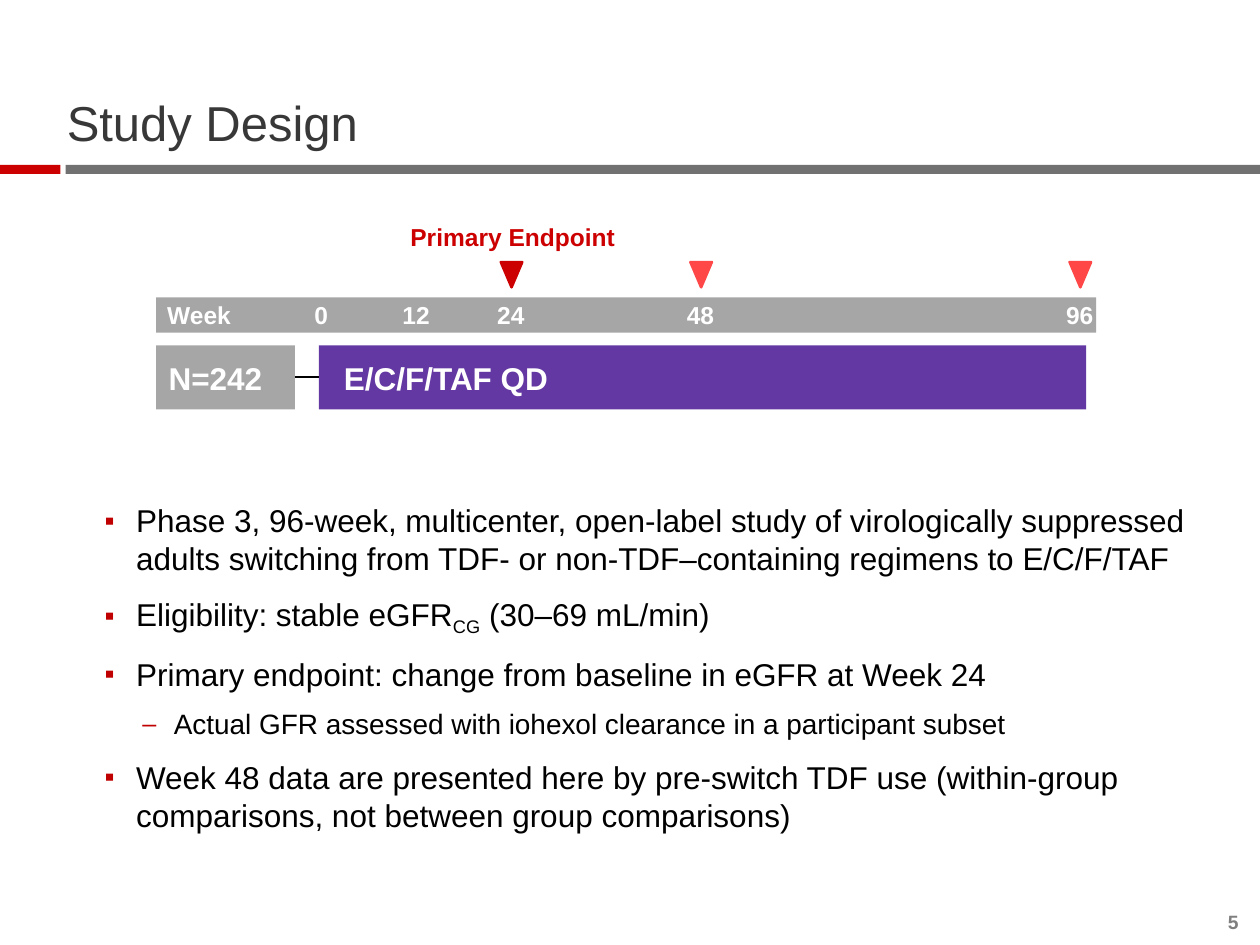
import pptx
import pptx.util
import pptx.dml.color
import pptx.enum.shapes
import pptx.enum.text
import pptx.oxml.ns
from lxml import etree

Inches = pptx.util.Inches
Pt = pptx.util.Pt
Kind = pptx.enum.shapes.MSO_SHAPE
Align = pptx.enum.text.PP_ALIGN
Anchor = pptx.enum.text.MSO_ANCHOR
qn = pptx.oxml.ns.qn
COLORS = {"red": "CC0000", "light": "FF4747", "dark": "717171", "gray": "A6A6A6",
          "violet": "6338A2", "title": "383838", "bullet": "C00000",
          "number": "7F7F7F", "black": "000000", "white": "FFFFFF"}


def color(name):
    return pptx.dml.color.RGBColor.from_string(COLORS[name])


def write(frame, text, size=14, ink="white", bold=True, align=Align.CENTER,
          anchor=Anchor.MIDDLE, pad=(0, 0, 0, 0)):
    """Put one formatted paragraph in a text frame."""
    frame.word_wrap = True
    frame.auto_size = pptx.enum.text.MSO_AUTO_SIZE.NONE
    frame.vertical_anchor = anchor
    (frame.margin_left, frame.margin_top,
     frame.margin_right, frame.margin_bottom) = [Inches(p) for p in pad]
    para = frame.paragraphs[0]
    para.alignment = align
    run = para.add_run()
    run.text = text
    font = run.font
    font.name, font.size, font.bold = "Arial", Pt(size), bold
    font.color.rgb = color(ink)


def block(kind, box, fill):
    """Add a filled shape without shadow or line."""
    shape = slide.shapes.add_shape(kind, *[Inches(v) for v in box])
    shape.shadow.inherit = False
    shape.fill.solid()
    shape.fill.fore_color.rgb = color(fill)
    shape.line.fill.background()
    return shape


deck = pptx.Presentation()
deck.slide_width, deck.slide_height = Inches(10), Inches(7.5)
slide = deck.slides.add_slide(deck.slide_layouts[1])
title, body = slide.placeholders

# Title and rule
title.left, title.top, title.width, title.height = [
    Inches(v) for v in (0.53, 0.47, 9, 0.74)]
write(title.text_frame, "Study Design", size=28, ink="title", bold=False,
      align=Align.LEFT, anchor=Anchor.BOTTOM)
title.text_frame.paragraphs[0].line_spacing = 0.9
block(Kind.RECTANGLE, (0.52, 1.31, 9.48, 0.07), "dark")
block(Kind.RECTANGLE, (0, 1.31, 0.48, 0.07), "red")

# Study arm
group = block(Kind.RECTANGLE, (1.24, 2.74, 1.1, 0.51), "gray")
write(group.text_frame, "N=242", size=18, align=Align.LEFT, pad=(0.1, 0.05, 0.1, 0.05))
arm = block(Kind.RECTANGLE, (2.53, 2.74, 6.09, 0.51), "violet")
write(arm.text_frame, "E/C/F/TAF QD", size=18, align=Align.LEFT, pad=(0.2, 0.05, 0.1, 0.05))
link = slide.shapes.add_connector(pptx.enum.shapes.MSO_CONNECTOR.STRAIGHT, 0, 0, 0, 0)
link.begin_connect(group, 3)
link.end_connect(arm, 1)
link.line.color.rgb = color("black")
link.line.width = Pt(1)
etree.SubElement(link.element.spPr, qn("a:effectLst"))

# Time line: week labels and visit marks
block(Kind.RECTANGLE, (1.24, 2.36, 7.46, 0.28), "gray")
marks = {24: "red", 48: "light", 96: "light"}
labels = [("Week", 1.58, 2.33, "white"), ("Primary Endpoint", 4.07, 1.71, "red")]
for week in (0, 12, 24, 48, 96):
    mid = 2.55 + 0.0627 * week
    labels.append((str(week), mid, 2.33, "white"))
    if week in marks:
        mark = block(Kind.ISOSCELES_TRIANGLE, (mid - 0.08, 2.08, 0.17, 0.2), marks[week])
        mark.rotation = 180
        mark.line.color.rgb = color(marks[week])
        mark.line.width = Pt(1.5)
for text, mid, top, ink in labels:
    wide = 1.84 if len(text) > 4 else 0.7
    label = slide.shapes.add_textbox(Inches(mid - wide / 2), Inches(top),
                                     Inches(wide), Inches(0.34))
    write(label.text_frame, text, ink=ink)

# Bullet list: level and runs, where each second run is a subscript
body.left, body.top, body.width, body.height = [
    Inches(v) for v in (0.83, 3.98, 9, 2.4)]
items = [
    (0, ["Phase 3, 96-week, multicenter, open-label study of virologically suppressed "
         "adults switching from TDF- or non-TDF–containing regimens to E/C/F/TAF"]),
    (0, ["Eligibility: stable eGFR", "CG", " (30–69 mL/min)"]),
    (0, ["Primary endpoint: change from baseline in eGFR at Week 24"]),
    (1, ["Actual GFR assessed with iohexol clearance in a participant subset"]),
    (0, ["Week 48 data are presented here by pre-switch TDF use (within-group "
         "comparisons, not between group comparisons)"]),
]
frame = body.text_frame
write(frame, items[0][1][0], size=18, ink="black", bold=False,
      align=Align.LEFT, anchor=Anchor.TOP)
for i, (level, parts) in enumerate(items):
    para = frame.add_paragraph() if i else frame.paragraphs[0]
    para.level = level
    para.space_before = Pt(10)
    para.line_spacing = 0.9 if level else 1.0
    props = para._p.get_or_add_pPr()
    props.set("marL", str(Inches(0.55 if level else 0.25)))
    props.set("indent", str(Inches(-0.25)))
    tint = etree.SubElement(props, qn("a:buClr"))
    etree.SubElement(tint, qn("a:srgbClr"), val=COLORS["bullet"])
    etree.SubElement(props, qn("a:buSzPct"), val="90000")
    etree.SubElement(props, qn("a:buFont"), typeface="Arial")
    etree.SubElement(props, qn("a:buChar"), char="–" if level else "▪")
    for j, text in enumerate(parts if i else []):
        run = para.add_run()
        run.text = text
        run.font.name, run.font.size = "Arial", Pt(16 if level else 18)
        run.font.color.rgb = color("black")
        if j == 1:
            run.font._element.set("baseline", "-25000")

# Slide number
number = slide.shapes.add_textbox(Inches(9.56), Inches(7.23), Inches(0.27), Inches(0.18))
write(number.text_frame, "5", size=11, ink="number", align=Align.RIGHT, anchor=Anchor.BOTTOM)

deck.save("out.pptx")
